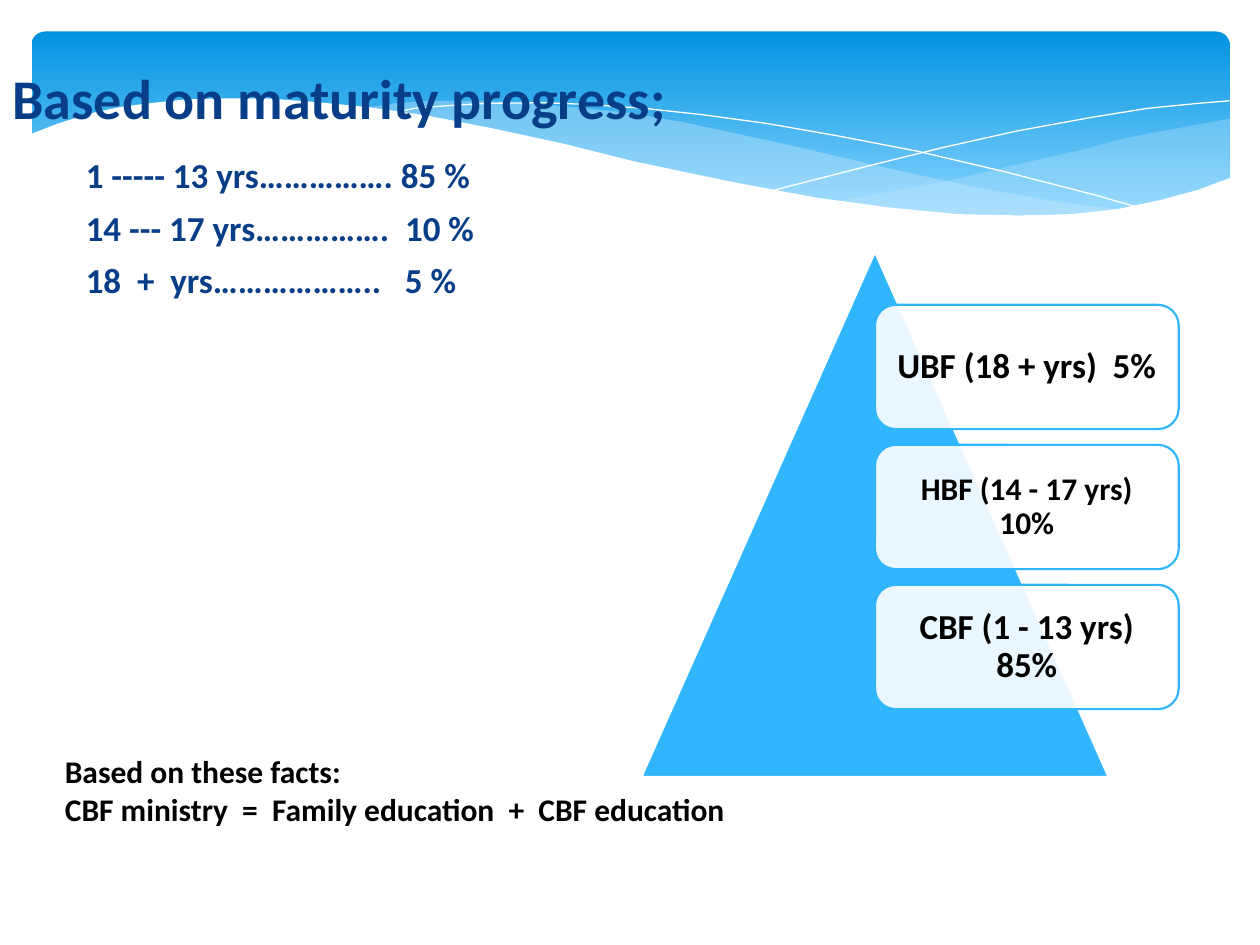
import dataclasses
import lxml.etree
import pptx
import pptx.dml.color
import pptx.enum.shapes
import pptx.enum.text
import pptx.oxml.ns
import pptx.util

Pt = pptx.util.Pt
Shape = pptx.enum.shapes.MSO_SHAPE
Anchor = pptx.enum.text.MSO_ANCHOR
Align = pptx.enum.text.PP_ALIGN
qn = pptx.oxml.ns.qn


@dataclasses.dataclass
class Theme:
    font: str = "Calibri"
    navy: str = "073E87"
    black: str = "000000"
    white: str = "FFFFFF"
    sky: str = "31B6FD"
    pale: str = "C6E7FC"
    deep: str = "0293E0"
    light: str = "83D3FE"
    title: int = 32
    large: int = 20
    small: int = 18


class Deck:
    """Hold the theme and the current slide, and draw each kind of element."""

    def __init__(self, theme):
        self.theme = theme
        self.file = pptx.Presentation()
        self.file.slide_width, self.file.slide_height = Pt(720), Pt(540)
        self.slide = self.file.slides.add_slide(self.file.slide_layouts[1])

    def color(self, code):
        return pptx.dml.color.RGBColor.from_string(code)

    def paint(self, shape, fill=None, line=None, width=1.25, alpha=100):
        shape.shadow.inherit = False
        if fill:
            shape.fill.solid()
            shape.fill.fore_color.rgb = self.color(fill)
            if alpha < 100:
                tone = shape.element.spPr.find(qn("a:solidFill"))[0]
                lxml.etree.SubElement(tone, qn("a:alpha"), val=str(alpha * 1000))
        else:
            shape.fill.background()
        if line:
            shape.line.color.rgb = self.color(line)
            shape.line.width = Pt(width)
        else:
            shape.line.fill.background()

    def shape(self, kind, left, top, width, height, **style):
        shape = self.slide.shapes.add_shape(
            kind, Pt(left), Pt(top), Pt(width), Pt(height))
        self.paint(shape, **style)
        return shape

    def banner(self, left, top, width, height):
        shape = self.shape(Shape.ROUNDED_RECTANGLE, left, top, width, height)
        shape.adjustments[0] = 0.07
        shape.fill.gradient()
        shape.fill.gradient_angle = 270
        tones = (0, self.theme.deep), (0.9, self.theme.light)
        for stop, (place, code) in zip(shape.fill.gradient_stops, tones):
            stop.position = place
            stop.color.rgb = self.color(code)

    def wave(self, points, close=True, **style):
        spots = [(Pt(x), Pt(y)) for x, y in points]
        pen = self.slide.shapes.build_freeform(*spots[0])
        pen.add_line_segments(spots[1:], close=close)
        self.paint(pen.convert_to_shape(), **style)

    def label(self, shape, text, size, code, anchor=Anchor.TOP,
              align=Align.LEFT, after=0, lead=1.0):
        frame = shape.text_frame
        frame.text = text
        frame.word_wrap = True
        frame.auto_size = pptx.enum.text.MSO_AUTO_SIZE.NONE
        frame.vertical_anchor = anchor
        for para in frame.paragraphs:
            para.alignment = align
            para.line_spacing = lead
            para.space_before, para.space_after = Pt(0), Pt(after)
            for run in para.runs:
                run.font.name = self.theme.font
                run.font.size = Pt(size)
                run.font.bold = True
                run.font.color.rgb = self.color(code)
        return frame

    def holder(self, index, box, text, size, **style):
        shape = self.slide.placeholders[index]
        shape.left, shape.top, shape.width, shape.height = map(Pt, box)
        shape.element.getparent().append(shape.element)
        return self.label(shape, text, size, self.theme.navy, **style)

    def title(self, text, box):
        frame = self.holder(0, box, text, self.theme.title, anchor=Anchor.BOTTOM)
        frame.margin_bottom = Pt(42)

    def plain(self, text, box):
        frame = self.holder(1, box, text, self.theme.large, after=6)
        for para in frame.paragraphs:
            props = para._p.get_or_add_pPr()
            props.set("marL", "0")
            props.set("indent", "0")
            lxml.etree.SubElement(props, qn("a:buNone"))

    def card(self, text, size, left, top, width, height):
        shape = self.shape(Shape.ROUNDED_RECTANGLE, left, top, width, height,
                           fill=self.theme.white, line=self.theme.sky, alpha=90)
        frame = self.label(shape, text, size, self.theme.black, Anchor.MIDDLE,
                           Align.CENTER, lead=0.9)
        frame.margin_left = frame.margin_right = Pt(5.5)
        frame.margin_top = frame.margin_bottom = Pt(5.5)

    def note(self, text, left, top, width, height):
        shape = self.slide.shapes.add_textbox(
            Pt(left), Pt(top), Pt(width), Pt(height))
        self.label(shape, text, self.theme.small, self.theme.black)


RIGHT = [
    (703, 67.7), (684, 71.3), (663.8, 74.9), (642.2, 79.2), (620.6, 85),
    (580.3, 94.3), (542.9, 103), (509, 109.4), (476.6, 115.2), (498.2, 118.1),
    (518, 120.2), (537, 121.7), (554, 123.1), (571, 123.8), (594, 123.8),
    (615.6, 122.8), (635, 121), (652.7, 117.8), (668.9, 113.8), (684.7, 109.4),
    (703.4, 102.2)]
LEFT = [
    (643.7, 120.2), (603.4, 115.2), (558.7, 107.3), (509, 96.5), (453.6, 83.5),
    (420.5, 76.3), (390.2, 69.8), (361.4, 64.8), (334.8, 61.9), (302.4, 59),
    (273.6, 57.6), (248.4, 57.6), (226, 59), (206.6, 61.9), (232.6, 64.8),
    (261.4, 69.8), (291.6, 76.3), (324, 83.5), (381.6, 97.2), (433.4, 107.3),
    (468.7, 113.8), (501, 118.8), (530.6, 121.7), (557.3, 123.8), (581.8, 124.6),
    (604, 124.6), (625, 122.4)]
FALL = [
    (223.2, 64.8), (236.9, 61.9), (254.2, 60.5), (279.4, 59), (311.8, 58.7),
    (337.7, 59.8), (367.9, 61.9), (401, 65.5), (438.5, 70.6), (479.5, 77.8),
    (524.2, 86.4), (573.1, 97.9), (626.4, 111.6), (653.8, 119.5)]
RISE = [
    (442.1, 108.7), (470.2, 101.5), (501.1, 93.6), (539.3, 84.2), (581, 74.9),
    (624.2, 67), (655.9, 61.9), (685.4, 59), (702.7, 57.6)]
FRONT = [
    (703.4, 101.5), (684, 108.7), (662.4, 114.5), (638.6, 119.5), (612, 122.4),
    (582.5, 123.1), (547.9, 122.4), (509.8, 118.8), (466.6, 113), (416.9, 103.7),
    (362.2, 92.2), (321.8, 82.1), (281.5, 73.4), (244.8, 66.2), (210.2, 61.2),
    (180, 58.3), (151.9, 56.2), (127.4, 56.2), (105.1, 56.9), (85.7, 59),
    (68.4, 61.2), (54.7, 64.1), (42.5, 67.7), (33.1, 70.6), (25.9, 73.4),
    (16.6, 77), (16.6, 161.3), (703.4, 161.3)]


def main():
    theme = Theme()
    deck = Deck(theme)
    deck.banner(18, 18, 684.7, 112.3)
    deck.wave(RIGHT, fill=theme.pale, alpha=29)
    deck.wave(LEFT, fill=theme.pale, alpha=40)
    for curve in (FALL, RISE):
        deck.wave(curve, close=False, line=theme.white, width=0)
    deck.wave(FRONT, fill=theme.white)

    deck.plain("1 ----- 13 yrs……………. 85 %\n"
               "14 --- 17 yrs…………….  10 %\n"
               "18  +  yrs………………..   5 %", (41.8, 84.2, 264.2, 149.8))
    deck.title("Based on maturity progress;", (0, 18, 684, 98.6))

    deck.shape(Shape.ISOSCELES_TRIANGLE, 366.5, 144, 267, 300,
               fill=theme.sky, line=theme.white)
    cards = [("UBF (18 + yrs)  5%", theme.large),
             ("HBF (14 - 17 yrs) 10%", theme.small),
             ("CBF (1 - 13 yrs) 85%", theme.large)]
    for row, (text, size) in enumerate(cards):
        deck.card(text, size, 500, 174.2 + 80 * row, 173.6, 71)

    deck.note("Based on these facts:\n"
              "CBF ministry  =  Family education  +  CBF education",
              30, 426.2, 420, 51)
    deck.file.save("out.pptx")


if __name__ == "__main__":
    main()
